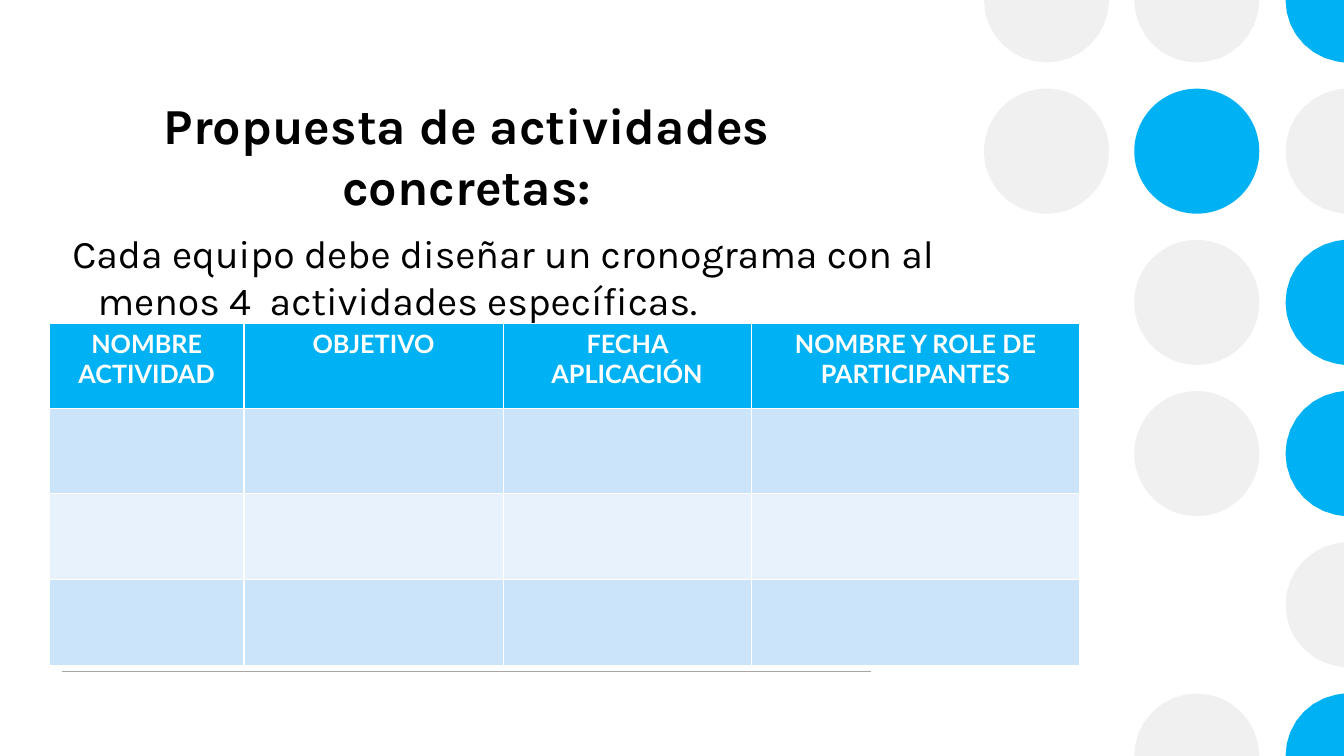
from math import cos, pi, sin

from lxml import etree
from pptx import Presentation
from pptx.dml.color import RGBColor
from pptx.enum.shapes import MSO_CONNECTOR, MSO_SHAPE
from pptx.enum.text import MSO_ANCHOR, PP_ALIGN
from pptx.oxml.ns import qn
from pptx.util import Inches, Pt

OVAL = MSO_SHAPE.OVAL
STRAIGHT = MSO_CONNECTOR.STRAIGHT
MIDDLE = MSO_ANCHOR.MIDDLE
CENTER = PP_ALIGN.CENTER

WIDE, HIGH = 13.33, 7.5
BLUE, GRAY = "00B2F3", "EFF0EF"


def color(code):
    return RGBColor.from_string(code)


def style(para, name, size, code, bold=False):
    font = para.font
    font.name = name
    font.size = Pt(size)
    font.bold = bold
    font.color.rgb = color(code)


deck = Presentation()
deck.slide_width = Inches(WIDE)
deck.slide_height = Inches(HIGH)
slide = deck.slides.add_slide(deck.slide_layouts[6])
shapes = slide.shapes

radius = 0.62
pitch = 1.5
steps = 32
dots = [
    (10.38, [GRAY, GRAY, None, None, None, None]),
    (11.87, [GRAY, BLUE, GRAY, GRAY, None, GRAY]),
    (13.37, [BLUE, GRAY, BLUE, BLUE, GRAY, BLUE]),
]
for x, codes in dots:
    for row, code in enumerate(codes):
        if code is None:
            continue
        y = row * pitch
        if x + radius <= WIDE and radius <= y <= HIGH - radius:
            dot = shapes.add_shape(
                OVAL, Inches(x - radius), Inches(y - radius),
                Inches(2 * radius), Inches(2 * radius))
        else:
            rim = []
            for step in range(steps):
                turn = 2 * pi * step / steps
                px = x + radius * cos(turn)
                py = y + radius * sin(turn)
                inside = px <= WIDE and 0 <= py <= HIGH
                if inside or step % (steps // 4) == 0:
                    px = min(px, WIDE)
                    py = min(max(py, 0), HIGH)
                    rim.append((Inches(px), Inches(py)))
            pen = shapes.build_freeform(*rim[0])
            pen.add_line_segments(rim[1:], close=True)
            dot = pen.convert_to_shape()
        dot.shadow.inherit = False
        dot.fill.solid()
        dot.fill.fore_color.rgb = color(code)
        dot.line.fill.background()

rule = shapes.add_connector(
    STRAIGHT, Inches(0.62), Inches(6.66), Inches(8.64), Inches(6.66))
rule.line.color.rgb = color("A6A6A6")
rule.line.width = Pt(1)
etree.SubElement(rule._element.spPr, qn("a:effectLst"))

title = shapes.add_textbox(
    Inches(0.62), Inches(0.84), Inches(8.02), Inches(1.39)).text_frame
title.word_wrap = True
title.vertical_anchor = MIDDLE
title.text = "Propuesta de actividades concretas:"
para = title.paragraphs[0]
para.alignment = CENTER
style(para, "Karla", 36, "000000", True)

body = shapes.add_textbox(
    Inches(0.62), Inches(2.23), Inches(9.75), Inches(4.07)).text_frame
body.word_wrap = True
body.text = ("Cada equipo debe diseñar un cronograma con al menos 4  "
             "actividades específicas.")
para = body.paragraphs[0]
para.space_before = Pt(9)
props = para._p.get_or_add_pPr()
props.set("marL", str(Inches(0.25)))
props.set("indent", str(Inches(-0.25)))
style(para, "Karla", 28, "000000")

heads = ["NOMBRE ACTIVIDAD", "OBJETIVO", "FECHA APLICACIÓN",
         "NOMBRE Y ROLE DE PARTICIPANTES"]
widths = [1.93, 2.57, 2.46, 3.26]
heights = [0.84, 0.85, 0.85, 0.85]
fills = [BLUE, "CCE4FA", "E7F2FD", "CCE4FA"]
table = shapes.add_table(
    len(heights), len(widths), Inches(0.49), Inches(3.21),
    Inches(sum(widths)), Inches(sum(heights))).table
for col, width in zip(table.columns, widths):
    col.width = Inches(width)
for row, height, fill in zip(table.rows, heights, fills):
    row.height = Inches(height)
    for cell in row.cells:
        cell.fill.solid()
        cell.fill.fore_color.rgb = color(fill)
for cell, head in zip(table.rows[0].cells, heads):
    cell.text = head
    para = cell.text_frame.paragraphs[0]
    para.alignment = CENTER
    style(para, "Lato", 18, "FFFFFF", True)

deck.save("out.pptx")
